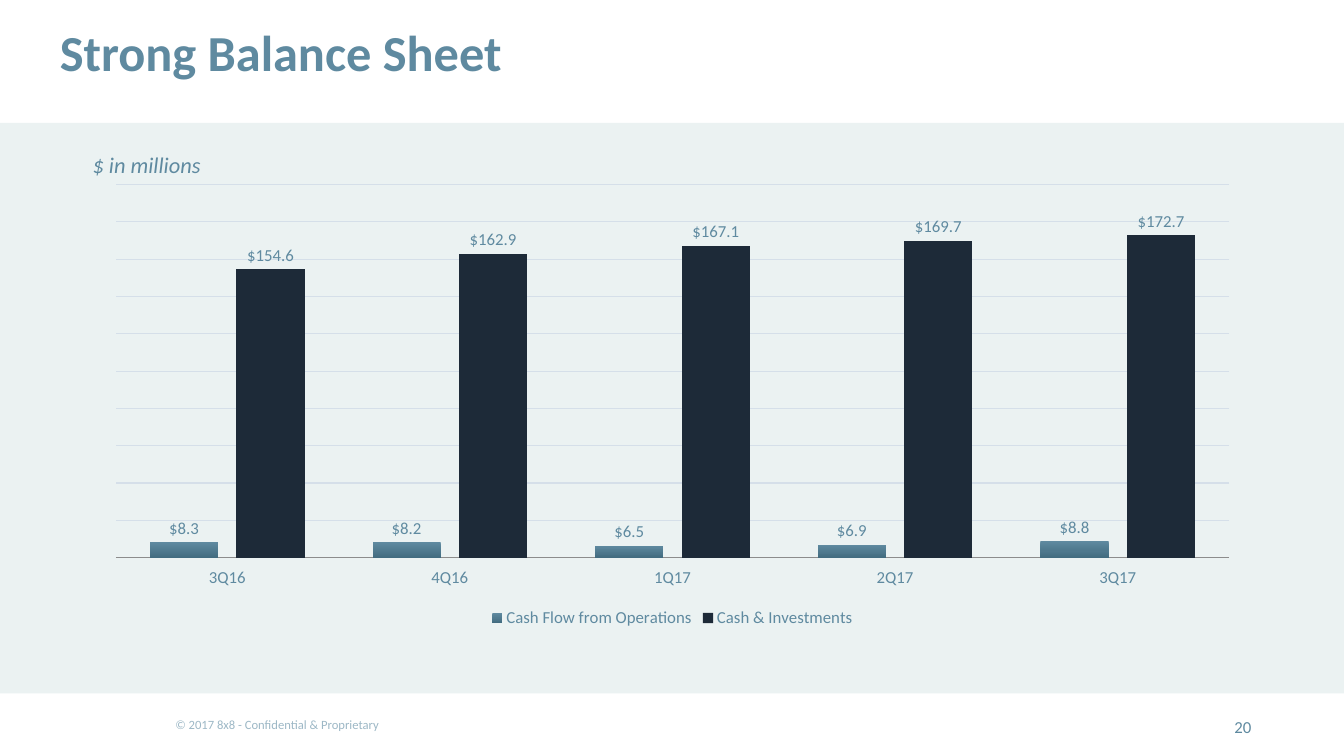
from pptx import Presentation
from pptx.chart.data import CategoryChartData
from pptx.dml.color import RGBColor
from pptx.enum.chart import XL_CHART_TYPE, XL_LABEL_POSITION, XL_LEGEND_POSITION, XL_TICK_LABEL_POSITION, XL_TICK_MARK
from pptx.enum.shapes import MSO_SHAPE
from pptx.enum.text import MSO_ANCHOR, MSO_AUTO_SIZE, PP_ALIGN
from pptx.util import Inches, Pt

WHITE = RGBColor(0xFF, 0xFF, 0xFF)
STEEL = RGBColor(0x5F, 0x8A, 0xA0)
DEEP_STEEL = RGBColor(0x42, 0x6C, 0x80)
PALE_STEEL = RGBColor(0x9D, 0xB8, 0xC6)
NAVY = RGBColor(0x1D, 0x2A, 0x38)
MIST = RGBColor(0xEB, 0xF2, 0xF2)
GRID = RGBColor(0xD5, 0xDF, 0xE9)
AXIS = RGBColor(0x8C, 0x8C, 0x8C)

QUARTERS = ["3Q16", "4Q16", "1Q17", "2Q17", "3Q17"]
BALANCES = {
    "Cash Flow from Operations": [8.3, 8.2, 6.5, 6.9, 8.8],
    "Cash & Investments": [154.6, 162.9, 167.1, 169.7, 172.7],
}


def apply(target, **values):
    for name, value in values.items():
        setattr(target, name, value)


def style_font(font, size, color, **extras):
    apply(font, name="Calibri", size=Pt(size), **extras)
    font.color.rgb = color


def add_heading(slide, left, top, width, height):
    heading = slide.shapes.title
    apply(heading, left=Inches(left), top=Inches(top),
          width=Inches(width), height=Inches(height))
    apply(heading.text_frame, text=" Strong Balance Sheet", word_wrap=True,
          vertical_anchor=MSO_ANCHOR.BOTTOM, auto_size=MSO_AUTO_SIZE.NONE)
    line = heading.text_frame.paragraphs[0]
    apply(line, alignment=PP_ALIGN.LEFT, line_spacing=0.9)
    style_font(line.runs[0].font, 36, STEEL, bold=True)


def add_label(slide, left, top, width, height, wording, size, color,
              align=PP_ALIGN.LEFT, anchor=MSO_ANCHOR.TOP, wrap=True, italic=False):
    label = slide.shapes.add_textbox(Inches(left), Inches(top), Inches(width), Inches(height))
    apply(label.text_frame, text=wording, word_wrap=wrap, vertical_anchor=anchor)
    line = label.text_frame.paragraphs[0]
    line.alignment = align
    style_font(line.runs[0].font, size, color, italic=italic)


def add_band(slide, left, top, width, height):
    band = slide.shapes.add_shape(
        MSO_SHAPE.RECTANGLE, Inches(left), Inches(top), Inches(width), Inches(height))
    band.shadow.inherit = False
    band.fill.solid()
    band.fill.fore_color.rgb = MIST
    band.line.fill.background()


def style_axes(chart):
    quarter_axis = chart.category_axis
    apply(quarter_axis, major_tick_mark=XL_TICK_MARK.NONE,
          minor_tick_mark=XL_TICK_MARK.NONE,
          tick_label_position=XL_TICK_LABEL_POSITION.LOW)
    style_font(quarter_axis.tick_labels.font, 12, STEEL)
    quarter_axis.format.line.color.rgb = AXIS
    quarter_axis.format.line.width = Pt(0.75)

    dollar_axis = chart.value_axis
    apply(dollar_axis, minimum_scale=0, maximum_scale=200, major_unit=20,
          has_major_gridlines=True, visible=False)
    gridline = dollar_axis.major_gridlines.format.line
    gridline.color.rgb = GRID
    gridline.width = Pt(0.75)


def style_series(plot):
    cash_flow, investments = plot.series
    cash_flow.format.fill.gradient()
    cash_flow.format.fill.gradient_angle = 270
    for stop, color in zip(cash_flow.format.fill.gradient_stops, (STEEL, DEEP_STEEL)):
        stop.color.rgb = color
    investments.format.fill.solid()
    investments.format.fill.fore_color.rgb = NAVY
    for balance in (cash_flow, investments):
        balance.invert_if_negative = False
        amounts = balance.data_labels
        apply(amounts, show_value=True, position=XL_LABEL_POSITION.OUTSIDE_END,
              number_format='"$"#,##0.0', number_format_is_linked=False)
        style_font(amounts.font, 12, STEEL)


def add_balance_chart(slide, left, top, width, height):
    balances = CategoryChartData()
    balances.categories = QUARTERS
    for name, amounts in BALANCES.items():
        balances.add_series(name, amounts)
    chart = slide.shapes.add_chart(
        XL_CHART_TYPE.COLUMN_CLUSTERED, Inches(left), Inches(top),
        Inches(width), Inches(height), balances).chart
    style_font(chart.font, 18, NAVY)
    apply(chart, has_title=False, has_legend=True)
    apply(chart.legend, position=XL_LEGEND_POSITION.BOTTOM, include_in_layout=False)
    style_font(chart.legend.font, 12, STEEL)
    plot = chart.plots[0]
    apply(plot, gap_width=100, overlap=-27, vary_by_categories=False)
    style_axes(chart)
    style_series(plot)


def add_content(slide, left, top, width, height):
    add_band(slide, left, top, width, height)
    add_balance_chart(slide, left + 0.92, top + 0.52, width - 1.83, height - 1.13)
    add_label(slide, left + 0.82, top + 0.23, 1.28, 0.37, "$ in millions", 16, STEEL,
              wrap=False, italic=True)


def add_footer(slide, left, top, width):
    add_label(slide, left, top, 2.48, 0.25,
              "© 2017 8x8 - Confidential & Proprietary", 9, PALE_STEEL)
    add_label(slide, left + width - 0.47, top, 0.47, 0.3, "20", 12, STEEL,
              align=PP_ALIGN.RIGHT, anchor=MSO_ANCHOR.BOTTOM)


def main():
    deck = Presentation()
    apply(deck, slide_width=Inches(13.33), slide_height=Inches(7.5))
    slide = deck.slides.add_slide(deck.slide_layouts[5])
    slide.background.fill.solid()
    slide.background.fill.fore_color.rgb = WHITE
    add_heading(slide, 0.38, 0.21, 11.5, 0.66)
    add_content(slide, 0, 1.22, 13.33, 5.66)
    add_footer(slide, 1.64, 7.06, 10.87)
    deck.save("out.pptx")


if __name__ == "__main__":
    main()
